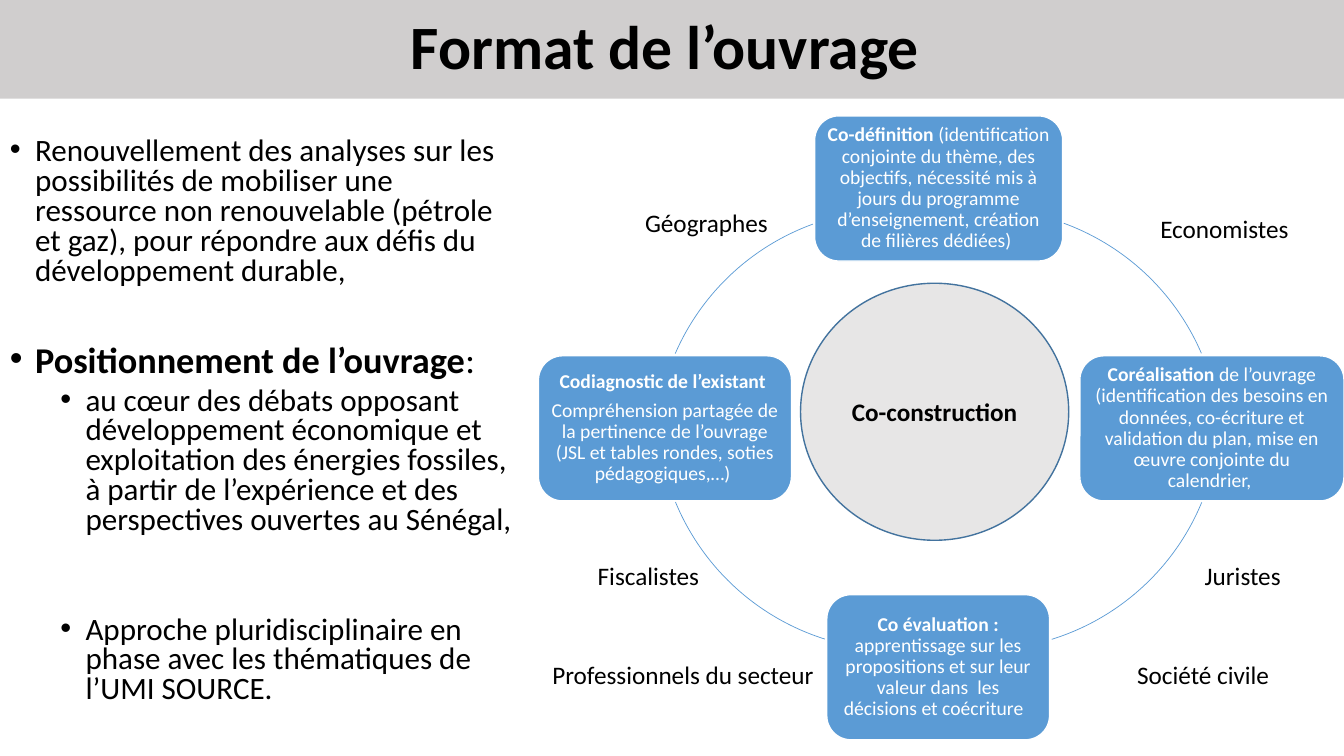
import dataclasses

import pptx
import pptx.dml.color
import pptx.enum.shapes
import pptx.enum.text
import pptx.oxml.ns
import pptx.util
from lxml import etree

Inches, Pt = pptx.util.Inches, pptx.util.Pt
RGB = pptx.dml.color.RGBColor.from_string
KINDS = pptx.enum.shapes.MSO_SHAPE
ALIGN = pptx.enum.text.PP_ALIGN
MIDDLE = pptx.enum.text.MSO_ANCHOR.MIDDLE


@dataclasses.dataclass(frozen=True)
class Theme:
    font: str = "Calibri"
    black: str = "000000"
    white: str = "FFFFFF"
    blue: str = "5B9BD5"
    edge: str = "43739E"
    band: str = "D0CECE"
    disc: str = "E7E6E6"
    title: float = 44
    head: float = 25.9
    body: float = 22.2
    label: float = 18
    step: float = 14


@dataclasses.dataclass(frozen=True)
class Span:
    text: str
    size: float
    bold: bool = False
    color: str = Theme.black


@dataclasses.dataclass(frozen=True)
class Step:
    left: float
    top: float
    width: float
    lines: list[list[Span]]


@dataclasses.dataclass(frozen=True)
class Arc:
    left: float
    top: float
    start: float
    end: float


@dataclasses.dataclass(frozen=True)
class Label:
    left: float
    top: float
    width: float
    text: str


@dataclasses.dataclass(frozen=True)
class Bullet:
    level: int
    before: float
    spans: list[Span]


THEME = Theme()
STEP_HIGH = 1.44
RING = 4.75


def bold(text: str) -> Span:
    return Span(text, THEME.step, True, THEME.white)


def plain(text: str) -> Span:
    return Span(text, THEME.step, False, THEME.white)


STEPS = [
    Step(8.08, 1.15, 2.46, [[bold("Co-définition "), plain(
        "(identification conjointe du thème, des objectifs, nécessité mis à jours "
        "du programme d’enseignement, création de filières dédiées) ")]]),
    Step(10.71, 3.53, 2.62, [[bold("Coréalisation"), plain(
        " de l’ouvrage (identification des besoins en données, co-écriture et "
        "validation du plan, mise en œuvre conjointe du calendrier, ")]]),
    Step(8.2, 5.9, 2.21, [[bold("Co évaluation : "), plain(
        "apprentissage sur les propositions et sur leur valeur dans  les "
        "décisions et coécriture  ")]]),
    Step(5.34, 3.53, 2.51, [[bold("Codiagnostic de l’existant ")], [plain(
        "Compréhension partagée de la pertinence de l’ouvrage (JSL et tables "
        "rondes, soties pédagogiques,…) ")]]),
]
# Angles run clockwise from the right, in degrees
ARCS = [
    Arc(7.36, 2.07, 290.1, 336.7),
    Arc(7.35, 1.7, 22.5, 72.7),
    Arc(6.52, 1.7, 107.5, 157.6),
    Arc(6.5, 2.08, 203.5, 250),
]
LABELS = [
    Label(6.3, 2.01, 1.76, "Géographes"),
    Label(11.41, 2.07, 1.77, "Economistes"),
    Label(11.85, 5.51, 1.08, "Juristes"),
    Label(5.83, 5.51, 2, "Fiscalistes"),
    Label(11.18, 6.49, 2.16, "Société civile"),
    Label(5.38, 6.49, 2.9, "Professionnels du secteur"),
]
BULLETS = [
    Bullet(0, 10, [Span(
        "Renouvellement des analyses sur les possibilités de mobiliser une "
        "ressource non renouvelable (pétrole et gaz), pour répondre aux défis du "
        "développement durable,", THEME.body)]),
    Bullet(0, 41.5, [Span("Positionnement de l’ouvrage", THEME.head, True),
                     Span(":", THEME.head)]),
    Bullet(1, 5, [Span(
        "au cœur des débats opposant développement économique et exploitation des "
        "énergies fossiles, à partir de l’expérience et des perspectives ouvertes "
        "au Sénégal,", THEME.body)]),
    Bullet(1, 57, [Span("Approche pluridisciplinaire en phase avec les thématiques "
                        "de l’UMI SOURCE.", THEME.body)]),
]


def write(para, spans: list[Span]) -> None:
    for span in spans:
        run = para.add_run()
        run.text = span.text
        run.font.name = THEME.font
        run.font.size = Pt(span.size)
        run.font.bold = span.bold
        run.font.color.rgb = RGB(span.color)


def mark(para, level: int) -> None:
    props = para._p.get_or_add_pPr()
    props.set("marL", str(Inches(0.25 + 0.5 * level)))
    props.set("indent", str(Inches(-0.25)))
    for tag, key, value in (("a:buFont", "typeface", "Arial"), ("a:buChar", "char", "•")):
        etree.SubElement(props, pptx.oxml.ns.qn(tag)).set(key, value)


def draw(slide, kind, box: tuple, line: str, weight: float, fill: str | None = None):
    shape = slide.shapes.add_shape(kind, *map(Inches, box))
    shape.shadow.inherit = False
    shape.line.color.rgb = RGB(line)
    shape.line.width = Pt(weight)
    if fill:
        shape.fill.solid()
        shape.fill.fore_color.rgb = RGB(fill)
    else:
        shape.fill.background()
    return shape


def add_title(slide) -> None:
    title = slide.shapes.title
    title.left, title.top, title.width, title.height = map(Inches, (0, 0, 13.33, 0.98))
    title.fill.solid()
    title.fill.fore_color.rgb = RGB(THEME.band)
    title.text_frame.vertical_anchor = MIDDLE
    para = title.text_frame.paragraphs[0]
    para.alignment = ALIGN.CENTER
    para.line_spacing = 0.9
    write(para, [Span("Format de l’ouvrage ", THEME.title, True)])


def add_step(slide, step: Step) -> None:
    box = (step.left, step.top, step.width, STEP_HIGH)
    shape = draw(slide, KINDS.ROUNDED_RECTANGLE, box, THEME.white, 1, THEME.blue)
    frame = shape.text_frame
    frame.word_wrap = True
    frame.vertical_anchor = MIDDLE
    frame.margin_left = frame.margin_right = Inches(0.06)
    frame.margin_top = frame.margin_bottom = Inches(0.06)
    for i, spans in enumerate(step.lines):
        para = frame.add_paragraph() if i else frame.paragraphs[0]
        para.alignment = ALIGN.CENTER
        para.line_spacing = 0.9
        para.space_after = Pt(5)
        write(para, spans)


def add_arc(slide, arc: Arc) -> None:
    shape = draw(slide, KINDS.ARC, (arc.left, arc.top, RING, RING), THEME.blue, 0.5)
    for i, angle in enumerate((arc.start, arc.end)):
        shape.adjustments[i] = angle * 0.6


def add_body(slide) -> None:
    frame = slide.shapes.add_textbox(*map(Inches, (0, 1.32, 5.27, 6.12))).text_frame
    frame.word_wrap = True
    for i, bullet in enumerate(BULLETS):
        para = frame.add_paragraph() if i else frame.paragraphs[0]
        para.level = bullet.level
        para.line_spacing = 0.8
        para.space_before = Pt(bullet.before)
        mark(para, bullet.level)
        write(para, bullet.spans)


def add_label(slide, label: Label) -> None:
    box = (label.left, label.top, label.width, 0.4)
    frame = slide.shapes.add_textbox(*map(Inches, box)).text_frame
    frame.word_wrap = True
    write(frame.paragraphs[0], [Span(label.text, THEME.label)])


def add_hub(slide) -> None:
    hub = draw(slide, KINDS.OVAL, (7.94, 2.81, 2.66, 2.55), THEME.edge, 1, THEME.disc)
    hub.text_frame.vertical_anchor = MIDDLE
    para = hub.text_frame.paragraphs[0]
    para.alignment = ALIGN.CENTER
    write(para, [Span("Co-construction ", THEME.label, True)])


def main() -> None:
    deck = pptx.Presentation()
    deck.slide_width, deck.slide_height = Inches(13.33), Inches(7.5)
    slide = deck.slides.add_slide(deck.slide_layouts[5])
    # Cycle of steps
    for step, arc in zip(STEPS, ARCS):
        add_step(slide, step)
        add_arc(slide, arc)
    # Title and argument
    add_title(slide)
    add_body(slide)
    # Fields around the hub
    for label in LABELS:
        add_label(slide, label)
    add_hub(slide)
    deck.save("out.pptx")


if __name__ == "__main__":
    main()
